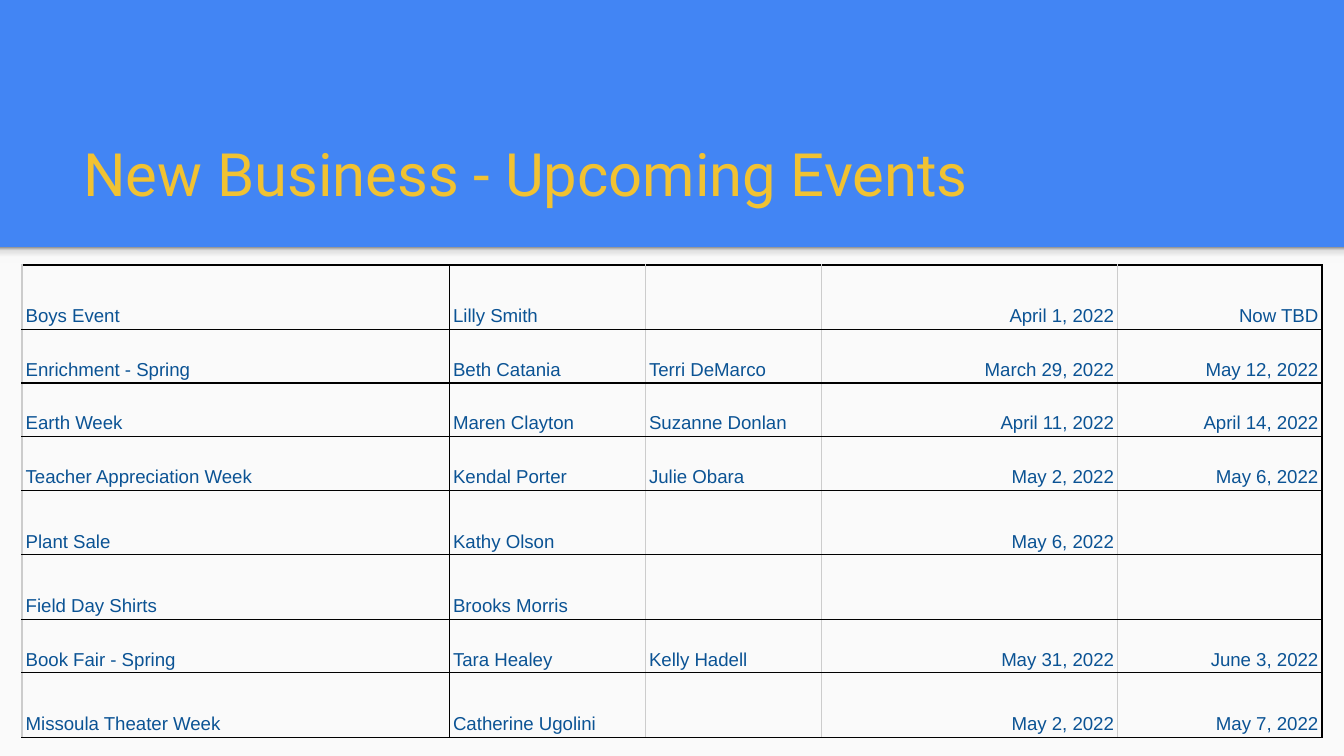
from copy import deepcopy
from typing import NamedTuple

from lxml.etree import SubElement
from pptx import Presentation
from pptx.dml.color import RGBColor
from pptx.enum.shapes import MSO_SHAPE
from pptx.enum.text import MSO_ANCHOR, PP_ALIGN
from pptx.oxml.ns import qn
from pptx.util import Pt

BLUE, PALE, GOLD, NAVY = "4285F4", "FAFAFA", "F1C232", "0B5394"
BLACK, GREY = "000000", "CCCCCC"
WIDE, HIGH, SPLIT = 720, 405, 132.5
TALL, LOW = 34.5, 28.75


class Event(NamedTuple):
    name: str
    lead: str
    helper: str
    start: str
    end: str


class Column(NamedTuple):
    width: float
    align: PP_ALIGN
    left: str
    right: str


EVENTS = [
    Event("Boys Event", "Lilly Smith", "", "April 1, 2022", "Now TBD"),
    Event("Enrichment - Spring", "Beth Catania", "Terri DeMarco",
          "March 29, 2022", "May 12, 2022"),
    Event("Earth Week", "Maren Clayton", "Suzanne Donlan",
          "April 11, 2022", "April 14, 2022"),
    Event("Teacher Appreciation Week", "Kendal Porter", "Julie Obara",
          "May 2, 2022", "May 6, 2022"),
    Event("Plant Sale", "Kathy Olson", "", "May 6, 2022", ""),
    Event("Field Day Shirts", "Brooks Morris", "", "", ""),
    Event("Book Fair - Spring", "Tara Healey", "Kelly Hadell",
          "May 31, 2022", "June 3, 2022"),
    Event("Missoula Theater Week", "Catherine Ugolini", "",
          "May 2, 2022", "May 7, 2022"),
]
COLUMNS = [
    Column(229, PP_ALIGN.LEFT, GREY, BLACK),
    Column(105, PP_ALIGN.LEFT, BLACK, GREY),
    Column(94.5, PP_ALIGN.LEFT, GREY, GREY),
    Column(158.5, PP_ALIGN.RIGHT, GREY, GREY),
    Column(109.5, PP_ALIGN.RIGHT, GREY, BLACK),
]


def color(code: str) -> RGBColor:
    return RGBColor.from_string(code)


def add_band(slide, top: float, height: float):
    """Add a full-width rectangle without outline."""
    band = slide.shapes.add_shape(
        MSO_SHAPE.RECTANGLE, 0, Pt(top), Pt(WIDE), Pt(height))
    band.shadow.inherit = False
    band.line.fill.background()
    return band


def shade(band, stops: list[tuple[int, str]]) -> None:
    """Fill a band with a gradient that runs upwards."""
    band.fill.gradient()
    band.fill.gradient_angle = 90
    first = band.fill.gradient_stops[0]
    nodes = band._element.spPr.find(qn("a:gradFill")).find(qn("a:gsLst"))
    first.color.rgb = color(PALE)
    model = deepcopy(nodes[0])
    for node in list(nodes):
        nodes.remove(node)
    for _ in stops:
        nodes.append(deepcopy(model))
    for stop, (place, code) in zip(band.fill.gradient_stops, stops):
        stop.position = place / 100
        stop.color.rgb = color(code)


def style(para, size: float, font: str, code: str) -> None:
    for run in para.runs:
        run.font.size = Pt(size)
        run.font.name = font
        run.font.color.rgb = color(code)


def add_title(slide, text: str) -> None:
    box = slide.shapes.add_textbox(Pt(37.5), Pt(58.5), Pt(647.5), Pt(60.5))
    frame = box.text_frame
    frame.word_wrap = True
    frame.vertical_anchor = MSO_ANCHOR.BOTTOM
    frame.margin_left = frame.margin_right = Pt(7.2)
    frame.margin_top = frame.margin_bottom = Pt(7.2)
    frame.text = text
    style(frame.paragraphs[0], 32, "Roboto", GOLD)


def set_edges(cell, left: str, right: str) -> None:
    """Rule the cell; top and bottom are always black."""
    props = cell._tc.get_or_add_tcPr()
    edges = {"L": left, "R": right, "T": BLACK, "B": BLACK}
    for side, code in edges.items():
        line = SubElement(props, qn(f"a:ln{side}"), w=str(Pt(0.75)))
        fill = SubElement(line, qn("a:solidFill"))
        SubElement(fill, qn("a:srgbClr"), val=code)


def fill_cell(cell, text: str, col: Column) -> None:
    set_edges(cell, col.left, col.right)
    cell.fill.background()
    cell.vertical_anchor = MSO_ANCHOR.BOTTOM
    cell.margin_left = cell.margin_right = Pt(2)
    cell.margin_top = cell.margin_bottom = Pt(1.5)
    if text:
        cell.text_frame.text = text
        para = cell.text_frame.paragraphs[0]
        para.alignment = col.align
        para.line_spacing = 1.15
        style(para, 10, "Arial", NAVY)


def add_events(slide) -> None:
    heights = [LOW if event.helper else TALL for event in EVENTS]
    width = sum(col.width for col in COLUMNS)
    table = slide.shapes.add_table(
        len(EVENTS), len(COLUMNS), Pt(11.75), Pt(142),
        Pt(width), Pt(sum(heights))).table
    table.first_row = table.horz_banding = False
    for place, col in zip(table.columns, COLUMNS):
        place.width = Pt(col.width)
    for row, height, event in zip(table.rows, heights, EVENTS):
        row.height = Pt(height)
        for cell, text, col in zip(row.cells, event, COLUMNS):
            fill_cell(cell, text, col)


def main() -> None:
    deck = Presentation()
    deck.slide_width, deck.slide_height = Pt(WIDE), Pt(HIGH)
    slide = deck.slides.add_slide(deck.slide_layouts[6])

    # Background: blue head, pale body, soft shade below the head
    slide.background.fill.solid()
    slide.background.fill.fore_color.rgb = color(BLUE)
    body = add_band(slide, SPLIT, HIGH - SPLIT)
    body.fill.solid()
    body.fill.fore_color.rgb = color(PALE)
    shade(add_band(slide, SPLIT, 8.5),
          [(0, "F9F9F9"), (36, "F9F9F9"), (80, "DEDEDE"), (100, "999999")])

    # Content
    add_title(slide, "New Business - Upcoming Events")
    add_events(slide)
    deck.save("out.pptx")


if __name__ == "__main__":
    main()
